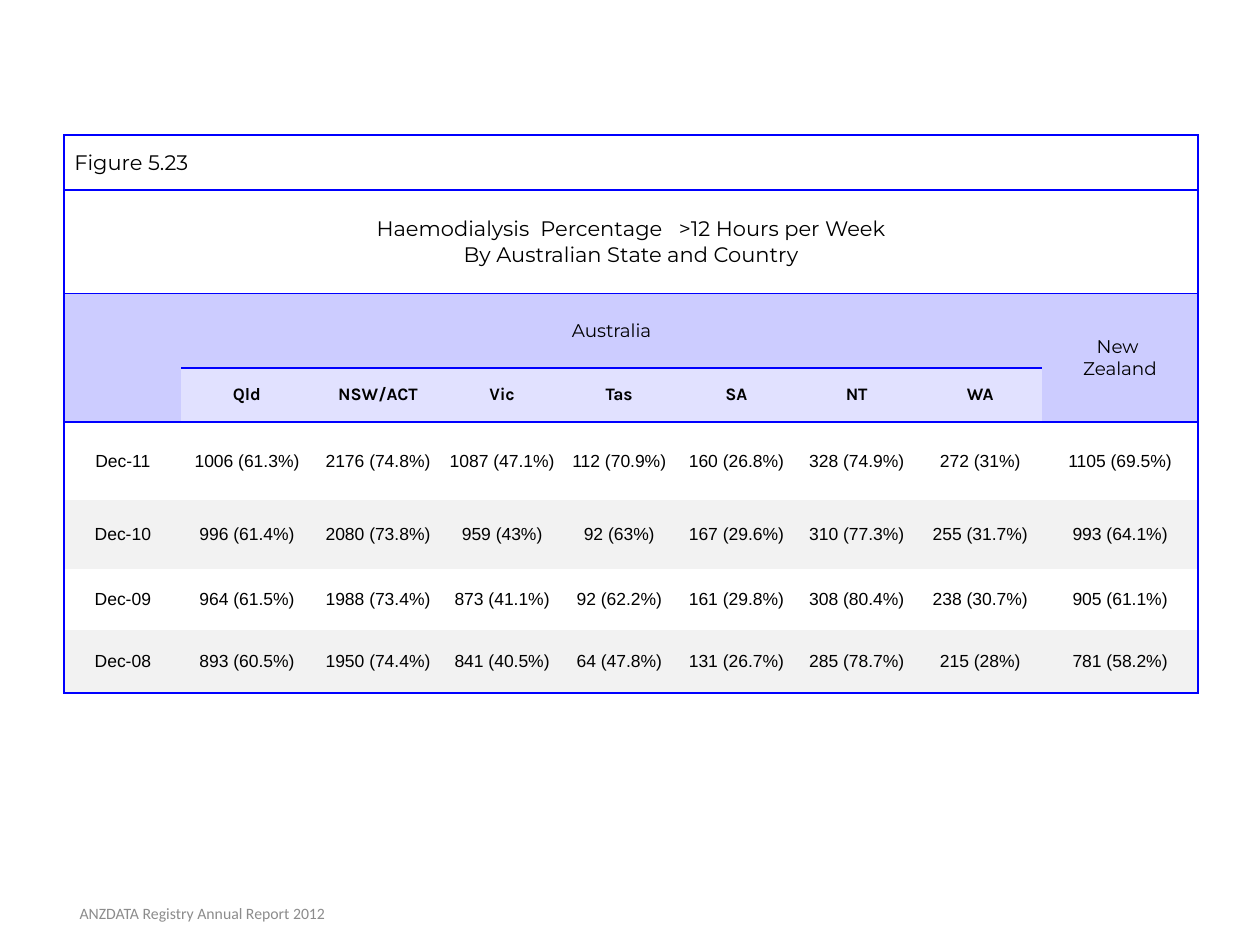
from dataclasses import dataclass

from lxml import etree
from pptx import Presentation
from pptx import util as u
from pptx.dml.color import RGBColor
from pptx.enum import text
from pptx.oxml.ns import qn


@dataclass(frozen=True)
class Theme:
    ink: str = "000000"
    muted: str = "8C8C8C"
    line: str = "0000FF"
    header: str = "CCCCFF"
    subheader: str = "E1E1FF"
    band: str = "F2F2F2"
    paper: str = "FFFFFF"
    heading_font: str = "Montserrat"
    label_font: str = "Karla"
    body_font: str = "Arial"
    footer_font: str = "Calibri"
    title_size: float = 12
    group_size: float = 10.5
    body_size: float = 10
    footer_size: float = 9
    line_width: float = 1


COLUMNS = [0.93, 1.04, 1.04, 0.93, 0.93, 0.93, 0.98, 0.98, 1.24]
ROWS = [0.44, 0.82, 0.59, 0.43, 0.62, 0.55, 0.48, 0.5]
STATES = ["Qld", "NSW/ACT", "Vic", "Tas", "SA", "NT", "WA"]
RESULTS = [
    ["Dec-11", "1006 (61.3%)", "2176 (74.8%)", "1087 (47.1%)", "112 (70.9%)",
     "160 (26.8%)", "328 (74.9%)", "272 (31%)", "1105 (69.5%)"],
    ["Dec-10", "996 (61.4%)", "2080 (73.8%)", "959 (43%)", "92 (63%)",
     "167 (29.6%)", "310 (77.3%)", "255 (31.7%)", "993 (64.1%)"],
    ["Dec-09", "964 (61.5%)", "1988 (73.4%)", "873 (41.1%)", "92 (62.2%)",
     "161 (29.8%)", "308 (80.4%)", "238 (30.7%)", "905 (61.1%)"],
    ["Dec-08", "893 (60.5%)", "1950 (74.4%)", "841 (40.5%)", "64 (47.8%)",
     "131 (26.7%)", "285 (78.7%)", "215 (28%)", "781 (58.2%)"],
]
FIRST_RESULT = len(ROWS) - len(RESULTS)


def write(frame, lines, *, size, font, color, bold=False,
          align=text.PP_ALIGN.CENTER, after=None):
    for index, line in enumerate(lines):
        para = frame.paragraphs[0] if index == 0 else frame.add_paragraph()
        para.alignment = align
        if after is not None:
            para.space_after = u.Pt(after)
        span = para.add_run()
        span.text = line
        span.font.size = u.Pt(size)
        span.font.name = font
        span.font.bold = bold
        span.font.color.rgb = RGBColor.from_string(color)


def has_rule(row, column):
    """Tell whether a rule runs along the top of this grid position."""
    if row == 3:
        return 0 < column < len(COLUMNS) - 1
    return row in (0, 1, 2, FIRST_RESULT, len(ROWS))


class SlideBuilder:
    def __init__(self, page, theme):
        self.page = page
        self.theme = theme

    def table(self, left, top):
        grid = self.page.shapes.add_table(
            len(ROWS), len(COLUMNS), u.Inches(left), u.Inches(top),
            u.Inches(sum(COLUMNS)), u.Inches(sum(ROWS))).table
        grid.first_row = grid.horz_banding = False
        for column, width in zip(grid.columns, COLUMNS):
            column.width = u.Inches(width)
        for row, height in zip(grid.rows, ROWS):
            row.height = u.Inches(height)
        return grid

    def borders(self, cell, row, column):
        bottom = row + cell.span_height
        right = column + cell.span_width
        sides = {"L": column == 0, "R": right == len(COLUMNS),
                 "T": has_rule(row, column), "B": has_rule(bottom, column)}
        properties = cell._tc.get_or_add_tcPr()
        for side, visible in sides.items():
            line = etree.SubElement(properties, qn(f"a:ln{side}"),
                                    w=str(u.Pt(self.theme.line_width)))
            if visible:
                fill = etree.SubElement(line, qn("a:solidFill"))
                etree.SubElement(fill, qn("a:srgbClr"), val=self.theme.line)
            else:
                etree.SubElement(line, qn("a:noFill"))

    def style_cell(self, cell, row, column, fill):
        cell.vertical_anchor = text.MSO_ANCHOR.MIDDLE
        cell.margin_left = cell.margin_right = u.Inches(0.04)
        cell.margin_top = cell.margin_bottom = u.Inches(0.04)
        self.borders(cell, row, column)
        cell.fill.solid()
        cell.fill.fore_color.rgb = RGBColor.from_string(fill)

    def cell_text(self, cell, *lines, **style):
        defaults = dict(size=self.theme.body_size, font=self.theme.body_font,
                        color=self.theme.ink)
        write(cell.text_frame, lines, **(defaults | style))

    def footer(self, line, left, top, width, height):
        box = self.page.shapes.add_textbox(*map(u.Inches, (left, top, width, height)))
        frame = box.text_frame
        frame.word_wrap = True
        frame.vertical_anchor = text.MSO_ANCHOR.MIDDLE
        write(frame, [line], size=self.theme.footer_size,
              font=self.theme.footer_font, color=self.theme.muted)


def cell_fill(theme, row, column):
    if row < 2:
        return theme.paper
    if row == 3 and 0 < column < len(COLUMNS) - 1:
        return theme.subheader
    if row < FIRST_RESULT:
        return theme.header
    return theme.band if (row - FIRST_RESULT) % 2 else theme.paper


def main():
    deck = Presentation()
    deck.slide_width, deck.slide_height = u.Inches(10), u.Inches(7.5)
    theme = Theme()
    builder = SlideBuilder(deck.slides.add_slide(deck.slide_layouts[6]), theme)

    # Table grid with merged headings
    grid = builder.table(0.51, 1.07)
    last = len(COLUMNS) - 1
    for start, end in [((0, 0), (0, last)), ((1, 0), (1, last)),
                       ((2, 0), (3, 0)), ((2, 1), (2, last - 1)),
                       ((2, last), (3, last))]:
        grid.cell(*start).merge(grid.cell(*end))
    for row in range(len(ROWS)):
        for column in range(len(COLUMNS)):
            builder.style_cell(grid.cell(row, column), row, column,
                               cell_fill(theme, row, column))

    # Figure number and title
    title = dict(size=theme.title_size, font=theme.heading_font)
    number = grid.cell(0, 0)
    number.margin_left = number.margin_right = u.Inches(0.08)
    number.margin_top = number.margin_bottom = 0
    builder.cell_text(number, "Figure 5.23", align=text.PP_ALIGN.LEFT, **title)
    builder.cell_text(grid.cell(1, 0),
                      "Haemodialysis  Percentage   >12 Hours per Week",
                      "By Australian State and Country", **title)

    # Country and state headings
    group = dict(size=theme.group_size, font=theme.heading_font)
    builder.cell_text(grid.cell(2, 1), "Australia", **group)
    builder.cell_text(grid.cell(2, last), "New ", "Zealand", **group)
    for column, state in enumerate(STATES, start=1):
        builder.cell_text(grid.cell(3, column), state,
                          font=theme.label_font, bold=True)

    # Results by date
    for row, values in enumerate(RESULTS, start=FIRST_RESULT):
        for column, value in enumerate(values):
            builder.cell_text(grid.cell(row, column), value, after=14)

    # Footer
    builder.footer("ANZDATA Registry Annual Report 2012", 0.02, 7.05, 3.17, 0.4)

    deck.save("out.pptx")


if __name__ == "__main__":
    main()
